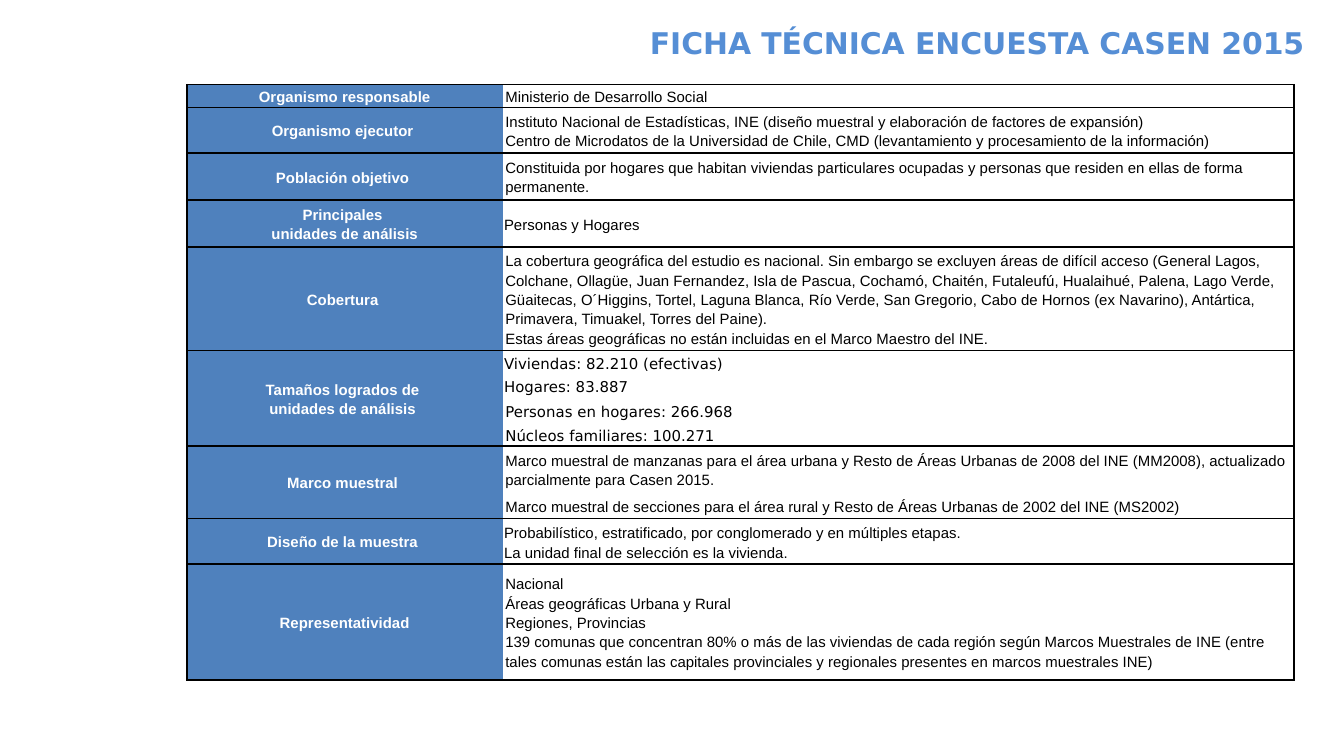
from dataclasses import dataclass

from lxml.etree import SubElement
from pptx import Presentation
from pptx.dml.color import RGBColor
from pptx.enum.text import MSO_ANCHOR, PP_ALIGN
from pptx.oxml.ns import qn
from pptx.util import Inches, Pt


@dataclass(frozen=True)
class Theme:
    head: RGBColor = RGBColor.from_string("558ED5")
    label: RGBColor = RGBColor.from_string("4F81BD")
    white: RGBColor = RGBColor.from_string("FFFFFF")
    black: RGBColor = RGBColor.from_string("000000")
    body: str = "Arial"
    wide: str = "DejaVu Sans"
    head_size: int = 16
    size: int = 8
    line: int = 1
    leading: float = 1.15


@dataclass(frozen=True)
class Row:
    height: float
    lines: tuple
    font: str = Theme.body
    tight: bool = False
    leading: float = Theme.leading


THEME = Theme()
PLAIN_STYLE = "{2D5ABB26-0587-4C30-8999-92F81FD0307C}"
TITLE = "FICHA TÉCNICA ENCUESTA CASEN 2015"

# Each group is the lines of its label and the rows beside it
GROUPS = [
    (("Organismo responsable",), [Row(0.17, ("Ministerio de Desarrollo Social",))]),
    (("Organismo ejecutor ",), [Row(0.34, (
        "Instituto Nacional de Estadísticas, INE (diseño muestral y elaboración de "
        "factores de expansión)",
        "Centro de Microdatos de la Universidad de Chile, CMD (levantamiento y "
        "procesamiento de la información)"))]),
    (("Población objetivo ",), [Row(0.35, (
        "Constituida por hogares que habitan viviendas particulares ocupadas y "
        "personas que residen en ellas de forma permanente.",))]),
    (("Principales ", "unidades de análisis"),
     [Row(0.35, ("Personas y Hogares",), tight=True)]),
    (("Cobertura ",), [Row(0.77, (
        "La cobertura geográfica del estudio es nacional. Sin embargo se excluyen "
        "áreas de difícil acceso (General Lagos, Colchane, Ollagüe, Juan Fernandez, "
        "Isla de Pascua, Cochamó, Chaitén, Futaleufú, Hualaihué, Palena, Lago Verde, "
        "Güaitecas, O´Higgins, Tortel, Laguna Blanca, Río Verde, San Gregorio, Cabo "
        "de Hornos (ex Navarino), Antártica, Primavera, Timuakel, Torres del Paine).",
        "Estas áreas geográficas no están incluidas en el Marco Maestro del INE."))]),
    (("Tamaños logrados de ", "unidades de análisis "), [
        Row(0.18, ("Viviendas: 82.210 (efectivas)",), THEME.wide, True),
        Row(0.18, ("Hogares: 83.887",), THEME.wide, True, 1.0),
        Row(0.18, ("Personas en hogares: 266.968",), THEME.wide),
        Row(0.17, ("Núcleos familiares: 100.271",), THEME.wide)]),
    (("Marco muestral ",), [
        Row(0.35, (
            "Marco muestral de manzanas para el área urbana y Resto de Áreas Urbanas "
            "de 2008 del INE (MM2008), actualizado parcialmente para Casen 2015.",)),
        Row(0.19, (
            "Marco muestral de secciones para el área rural y Resto de Áreas Urbanas "
            "de 2002 del INE (MS2002)",))]),
    (("Diseño de la muestra ",), [Row(0.34, (
        "Probabilístico, estratificado, por conglomerado y en múltiples etapas.",
        "La unidad final de selección es la vivienda."), tight=True)]),
    (("Representatividad",), [Row(0.86, (
        "Nacional",
        "Áreas geográficas Urbana y Rural",
        "Regiones, Provincias",
        "139 comunas que concentran 80% o más de las viviendas de cada región según "
        "Marcos Muestrales de INE (entre tales comunas están las capitales "
        "provinciales y regionales presentes en marcos muestrales INE)"))]),
]


def add_title(slide, left, top, width, height):
    title = slide.shapes.title
    title.left, title.top = Inches(left), Inches(top)
    title.width, title.height = Inches(width), Inches(height)
    frame = title.text_frame
    frame.text = TITLE
    frame.vertical_anchor = MSO_ANCHOR.MIDDLE
    para = frame.paragraphs[0]
    para.alignment = PP_ALIGN.RIGHT
    font = para.font
    font.name, font.size, font.bold = THEME.wide, Pt(THEME.head_size), True
    font.color.rgb = THEME.head


def set_edges(cell, sides):
    """Draw the sides named by letters out of LRTB and clear the others."""
    props = cell._tc.get_or_add_tcPr()
    for side in "LRTB":
        edge = SubElement(props, qn(f"a:ln{side}"), w=str(Pt(THEME.line)))
        if side in sides:
            fill = SubElement(edge, qn("a:solidFill"))
            SubElement(fill, qn("a:srgbClr"), val=str(THEME.black))
        else:
            SubElement(edge, qn("a:noFill"))


def write(cell, lines, font, color, leading, tight=False, label=False):
    cell.vertical_anchor = MSO_ANCHOR.MIDDLE
    cell.margin_left = cell.margin_right = Inches(0.01 if tight else 0.02)
    cell.margin_top = Inches(0.01 if tight else 0)
    cell.margin_bottom = 0
    cell.text = "\n".join(lines)
    for para in cell.text_frame.paragraphs:
        para.alignment = PP_ALIGN.CENTER if label else PP_ALIGN.LEFT
        para.line_spacing = leading
        para.font.name, para.font.size = font, Pt(THEME.size)
        para.font.bold = label
        para.font.color.rgb = color


def add_group(table, start, label, rows):
    """Fill one label and its rows, counting from the row at start."""
    last = len(rows) - 1
    for i, row in enumerate(rows):
        table.rows[start + i].height = Inches(row.height)
        name, cell = table.cell(start + i, 0), table.cell(start + i, 1)
        set_edges(name, "LTB")
        set_edges(cell, "R" + "T" * (i == 0) + "B" * (i == last))
        name.fill.solid()
        name.fill.fore_color.rgb = THEME.label
        cell.fill.background()
        write(cell, row.lines, row.font, THEME.black, row.leading, row.tight)
    head = table.cell(start, 0)
    if last:
        head.merge(table.cell(start + last, 0))
    write(head, label, THEME.body, THEME.white, THEME.leading, label=True)


def add_facts(slide, left, top, width, label_width):
    rows = [row for _, group in GROUPS for row in group]
    height = sum(row.height for row in rows)
    table = slide.shapes.add_table(
        len(rows), 2, Inches(left), Inches(top), Inches(width), Inches(height)).table
    table.first_row = table.horz_banding = False
    table._tbl.tblPr.find(qn("a:tableStyleId")).text = PLAIN_STYLE
    table.columns[0].width = Inches(label_width)
    table.columns[1].width = Inches(width - label_width)
    start = 0
    for label, group in GROUPS:
        add_group(table, start, label, group)
        start += len(group)


def main():
    deck = Presentation()
    deck.slide_width = Inches(10)
    deck.slide_height = deck.slide_width * 9 // 16
    slide = deck.slides.add_slide(deck.slide_layouts[5])
    add_facts(slide, 1.39, 0.63, 8.24, 2.35)
    add_title(slide, 0.91, 0.13, 8.9, 0.37)
    deck.save("out.pptx")


if __name__ == "__main__":
    main()
